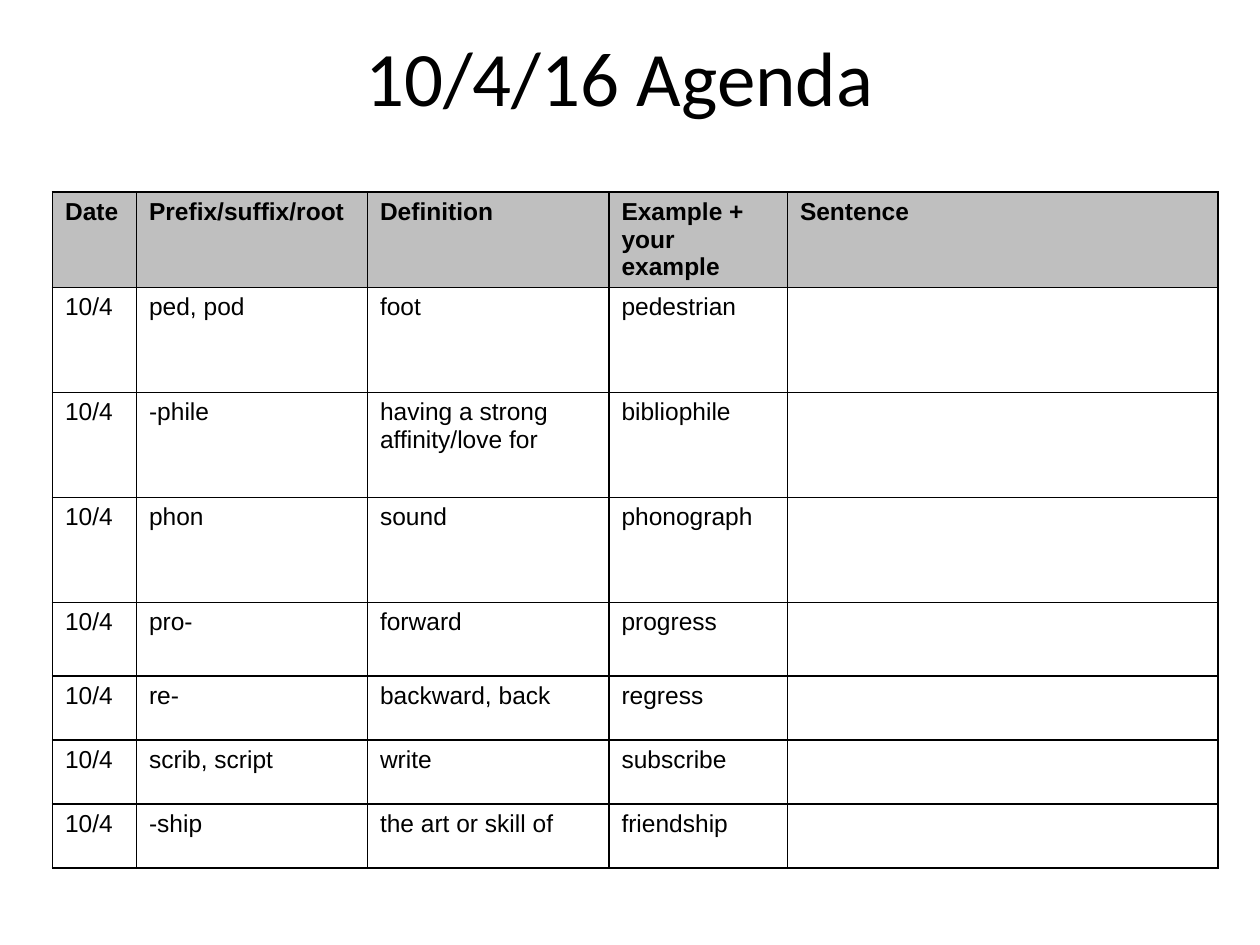
from lxml import etree
from pptx import Presentation
from pptx import util as u
from pptx.dml import color
from pptx.enum import text
from pptx.oxml import ns

GRID = u.Inches(1) / 12
COLUMN_UNITS = [8, 22, 23, 17, 41]
ROW_UNITS = [8.64, 10, 10, 10, 7, 6.1, 6.1, 6.1]
HEADINGS = ["Date", "Prefix/suffix/root", "Definition", "Example + your example", "Sentence"]
DATE = "10/4"
WORD_PARTS = [
    ("ped, pod", "foot", "pedestrian"),
    ("-phile", "having a strong affinity/love for", "bibliophile"),
    ("phon", "sound", "phonograph"),
    ("pro-", "forward", "progress"),
    ("re-", "backward, back", "regress"),
    ("scrib, script", "write", "subscribe"),
    ("-ship", "the art or skill of", "friendship"),
]


def rgb(value):
    """Turn a hex string into a colour."""
    return color.RGBColor.from_string(value)


def add_run(paragraph, words, font_name, size, bold=False):
    """Add one formatted black run to a paragraph."""
    run = paragraph.add_run()
    run.text = words
    run.font.name = font_name
    run.font.size = u.Pt(size)
    run.font.bold = bold
    run.font.color.rgb = rgb("000000")


def set_borders(cell, width=1, line_color="000000"):
    """Draw a solid line on all four sides of a cell."""
    properties = cell._tc.get_or_add_tcPr()
    for index, side in enumerate(("lnL", "lnR", "lnT", "lnB")):
        line = etree.Element(ns.qn(f"a:{side}"), w=str(u.Pt(width)))
        fill = etree.SubElement(line, ns.qn("a:solidFill"))
        etree.SubElement(fill, ns.qn("a:srgbClr"), val=line_color)
        properties.insert(index, line)


def place_title(slide, words, left, top, width, height):
    """Fit the title placeholder to its box and write it centred."""
    title = slide.shapes.title
    title.left, title.top, title.width, title.height = map(int, (left, top, width, height))
    frame = title.text_frame
    frame.word_wrap = True
    frame.auto_size = text.MSO_AUTO_SIZE.NONE
    frame.vertical_anchor = text.MSO_ANCHOR.MIDDLE
    paragraph = frame.paragraphs[0]
    paragraph.alignment = text.PP_ALIGN.CENTER
    add_run(paragraph, words, "Calibri", 44)


def place_vocabulary(slide, rows, left, top, width, height):
    """Fill the box with a ruled table whose first row is a grey header."""
    frame = slide.shapes.add_table(len(rows), len(COLUMN_UNITS), *map(int, (left, top, width, height)))
    table = frame.table
    table.horz_banding = False
    for column, units in zip(table.columns, COLUMN_UNITS):
        column.width = int(width * units / sum(COLUMN_UNITS))
    for row, units in zip(table.rows, ROW_UNITS):
        row.height = int(height * units / sum(ROW_UNITS))
    for row_index, row in enumerate(rows):
        header = row_index == 0
        for column_index, words in enumerate(row):
            cell = table.cell(row_index, column_index)
            if header:
                cell.fill.solid()
                cell.fill.fore_color.rgb = rgb("BFBFBF")
            else:
                cell.fill.background()
            set_borders(cell)
            if words:
                add_run(cell.text_frame.paragraphs[0], words, "Arial", 14, header)


def main():
    """Build the agenda slide and save it."""
    presentation = Presentation()
    presentation.slide_width = u.Inches(10)
    presentation.slide_height = u.Inches(7.5)
    slide = presentation.slides.add_slide(presentation.slide_layouts[5])
    place_title(slide, "10/4/16 Agenda", 8 * GRID, 3.6 * GRID, 102 * GRID, 7.3 * GRID)
    rows = [HEADINGS] + [[DATE, *parts, ""] for parts in WORD_PARTS]
    place_vocabulary(slide, rows, 5 * GRID, 18.3 * GRID,
                     sum(COLUMN_UNITS) * GRID, sum(ROW_UNITS) * GRID)
    presentation.save("out.pptx")


if __name__ == "__main__":
    main()
